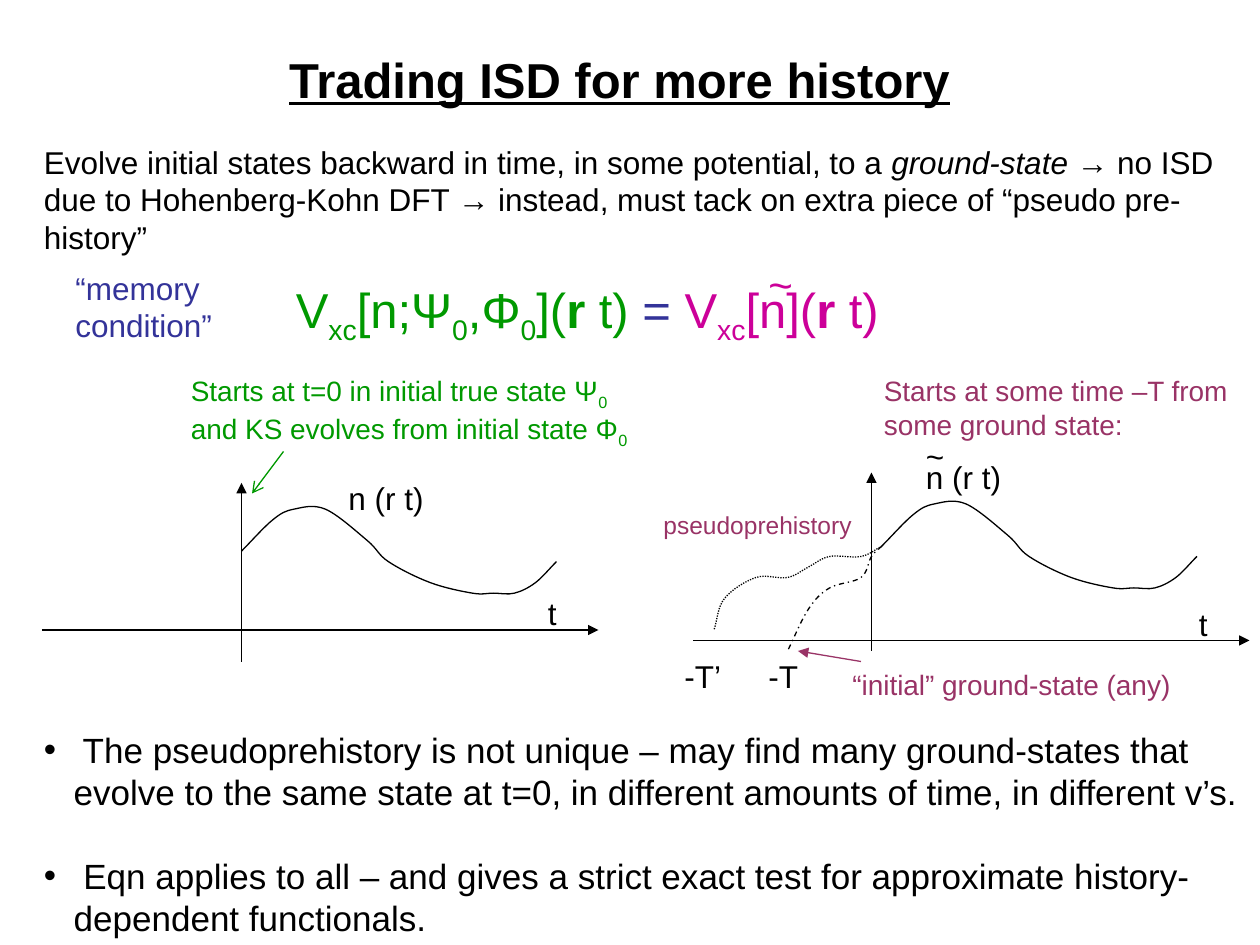
from lxml.etree import SubElement
from pptx import Presentation
from pptx.dml.color import RGBColor
from pptx.enum.dml import MSO_LINE
from pptx.enum.shapes import MSO_CONNECTOR
from pptx.enum.text import MSO_ANCHOR, PP_ALIGN
from pptx.oxml.ns import qn
from pptx.util import Pt

BLACK = RGBColor(0x00, 0x00, 0x00)
GREEN = RGBColor(0x00, 0x99, 0x00)
BLUE = RGBColor(0x33, 0x33, 0x99)
PINK = RGBColor(0xCC, 0x00, 0x99)
PLUM = RGBColor(0x99, 0x33, 0x66)
FONT = "Arial"

WAVE = [(0, 0), (18, -18), (30, -24), (48, -24), (72, -6), (84, 6), (108, 18),
        (132, 24), (144, 24), (156, 24), (168, 18), (180, 6)]
LONG = [(0, 0), (-12, 6), (-30, 6), (-42, 12), (-54, 18), (-72, 18), (-90, 30), (-96, 48)]
SHORT = [(0, 0), (-6, 6), (-12, 18), (-30, 24), (-42, 36), (-54, 60)]


def add_run(para, words, size, color, style=""):
    run = para.add_run()
    run.text = words
    font = run.font
    font.name = FONT
    font.size = Pt(size)
    font.color.rgb = color
    font.bold = "b" in style
    font.italic = "i" in style
    font.underline = "u" in style
    if "s" in style:
        run._r.get_or_add_rPr().set("baseline", "-25000")


def add_frame(slide, box):
    frame = slide.shapes.add_textbox(*map(Pt, box)).text_frame
    frame.word_wrap = True
    return frame


def add_text(slide, box, size, color, *runs):
    frame = add_frame(slide, box)
    para = frame.paragraphs[0]
    for run in runs:
        words, style, tint = run if isinstance(run, tuple) else (run, "", color)
        add_run(para, words, size, tint, style)
    return frame


def add_list(slide, box, size, gap, items):
    frame = add_frame(slide, box)
    for i, item in enumerate(items):
        para = frame.add_paragraph() if i else frame.paragraphs[0]
        para.space_before = Pt(gap if i else 0)
        props = para._p.get_or_add_pPr()
        props.set("marL", str(Pt(17)))
        props.set("indent", str(-Pt(17)))
        SubElement(props, qn("a:buFont"), typeface=FONT)
        SubElement(props, qn("a:buChar"), char="•")
        add_run(para, item, size, BLACK)


def add_arrow(slide, start, end, color=BLACK, kind="triangle"):
    line = slide.shapes.add_connector(MSO_CONNECTOR.STRAIGHT, *map(Pt, start + end))
    line.line.color.rgb = color
    line.line.width = Pt(0.75)
    SubElement(line.line._get_or_add_ln(), qn("a:tailEnd"), type=kind)
    SubElement(line._element.spPr, qn("a:effectLst"))


def smooth(knots):
    last = len(knots) - 1

    def slope(i):
        low, high = max(i - 1, 0), min(i + 1, last)
        part = 3 * (high - low)
        return [(b - a) / part for a, b in zip(knots[low], knots[high])]

    points = []
    for i in range(last):
        (x, y), (u, v) = knots[i], knots[i + 1]
        (dx, dy), (du, dv) = slope(i), slope(i + 1)
        points += [(x + dx, y + dy), (u - du, v - dv), (u, v)]
    return points


def add_curve(slide, start, knots, dash=None):
    left, top = start
    form = slide.shapes.build_freeform(Pt(left), Pt(top))
    form.add_line_segments([(Pt(left + x), Pt(top + y)) for x, y in smooth(knots)], close=False)
    shape = form.convert_to_shape()
    shape.shadow.inherit = False
    shape.fill.background()
    shape.line.color.rgb = BLACK
    shape.line.width = Pt(0.75)
    if dash:
        shape.line.dash_style = dash
    steps = list(shape._element.iter(qn("a:lnTo")))
    track = steps[0].getparent()
    for i in range(0, len(steps), 3):
        bend = SubElement(track, qn("a:cubicBezTo"))
        for step in steps[i:i + 3]:
            bend.append(step[0])
            track.remove(step)


def add_plot(slide, cross, left, right, top, low, start):
    x, y = cross
    add_arrow(slide, (x, low), (x, top))
    add_arrow(slide, (left, y), (right, y))
    add_curve(slide, start, WAVE)


def add_head(slide):
    title = add_text(slide, (30, 18, 648, 54), 28, BLACK,
                     ("Trading ISD for more history", "bu", BLACK))
    title.vertical_anchor = MSO_ANCHOR.MIDDLE
    title.paragraphs[0].alignment = PP_ALIGN.CENTER
    add_text(slide, (18, 78, 690, 72), 18, BLACK,
             "Evolve initial states backward in time, in some potential, to a ",
             ("ground-state ", "i", BLACK),
             "→ no ISD due to Hohenberg-Kohn DFT → instead, must tack on extra "
             "piece of “pseudo pre-history”")
    add_text(slide, (36, 150, 120, 50), 18, BLUE, "“memory condition”")


def add_formula(slide):
    sub = ("0", "s", GREEN)
    add_text(slide, (162, 156, 468, 41), 28, GREEN,
             "V", ("xc", "s", GREEN), "[n;Ψ", sub, ",Φ", sub, "](",
             ("r", "b", GREEN), " t)", (" = ", "", BLUE),
             ("V", "", PINK), ("xc", "s", PINK), ("[n](", "", PINK),
             ("r", "b", PINK), (" t)", "", PINK))
    add_text(slide, (432, 144, 30, 36), 24, PINK, "~")


def add_true(slide):
    add_plot(slide, (138, 360), 24, 342, 276, 378, (138, 315))
    add_text(slide, (306, 336, 42, 29), 18, BLACK, "t")
    add_text(slide, (192, 270, 84, 29), 18, BLACK, "n (r t)")
    add_text(slide, (102, 210, 270, 46), 16, GREEN,
             "Starts at t=0 in initial true state Ψ", ("0 ", "s", GREEN),
             "and KS evolves from initial state Φ", ("0", "s", GREEN))
    add_arrow(slide, (162, 258), (144, 282), GREEN, "arrow")


def add_pseudo(slide):
    start = (504, 312)
    add_plot(slide, (498, 366), 396, 714, 270, 372, start)
    add_curve(slide, start, LONG, MSO_LINE.ROUND_DOT)
    add_curve(slide, start, SHORT, MSO_LINE.DASH_DOT)
    for words, box in [("n (r t)", (522, 258, 84, 29)), ("~", (522, 246, 30, 29)),
                       ("t", (678, 342, 24, 29)), ("-T", (432, 372, 42, 29)),
                       ("-T’", (384, 372, 36, 29))]:
        add_text(slide, box, 18, BLACK, words)
    add_text(slide, (498, 210, 222, 46), 16, PLUM,
             "Starts at some time –T from some ground state:")
    add_text(slide, (480, 378, 204, 27), 16, PLUM, "“initial” ground-state (any)")
    add_text(slide, (372, 288, 126, 24), 14, PLUM, "pseudoprehistory")
    add_arrow(slide, (492, 378), (456, 372), PLUM)


def main():
    deck = Presentation()
    deck.slide_width, deck.slide_height = Pt(720), Pt(540)
    slide = deck.slides.add_slide(deck.slide_layouts[6])
    add_head(slide)
    add_formula(slide)
    add_true(slide)
    add_pseudo(slide)
    add_list(slide, (18, 412.5, 702, 127.5), 20, 24, [
        " The pseudoprehistory is not unique – may find many ground-states that evolve "
        "to the same state at t=0, in different amounts of time, in different v’s.",
        " Eqn applies to all – and gives a strict exact test for approximate "
        "history-dependent functionals."])
    deck.save("out.pptx")


if __name__ == "__main__":
    main()
